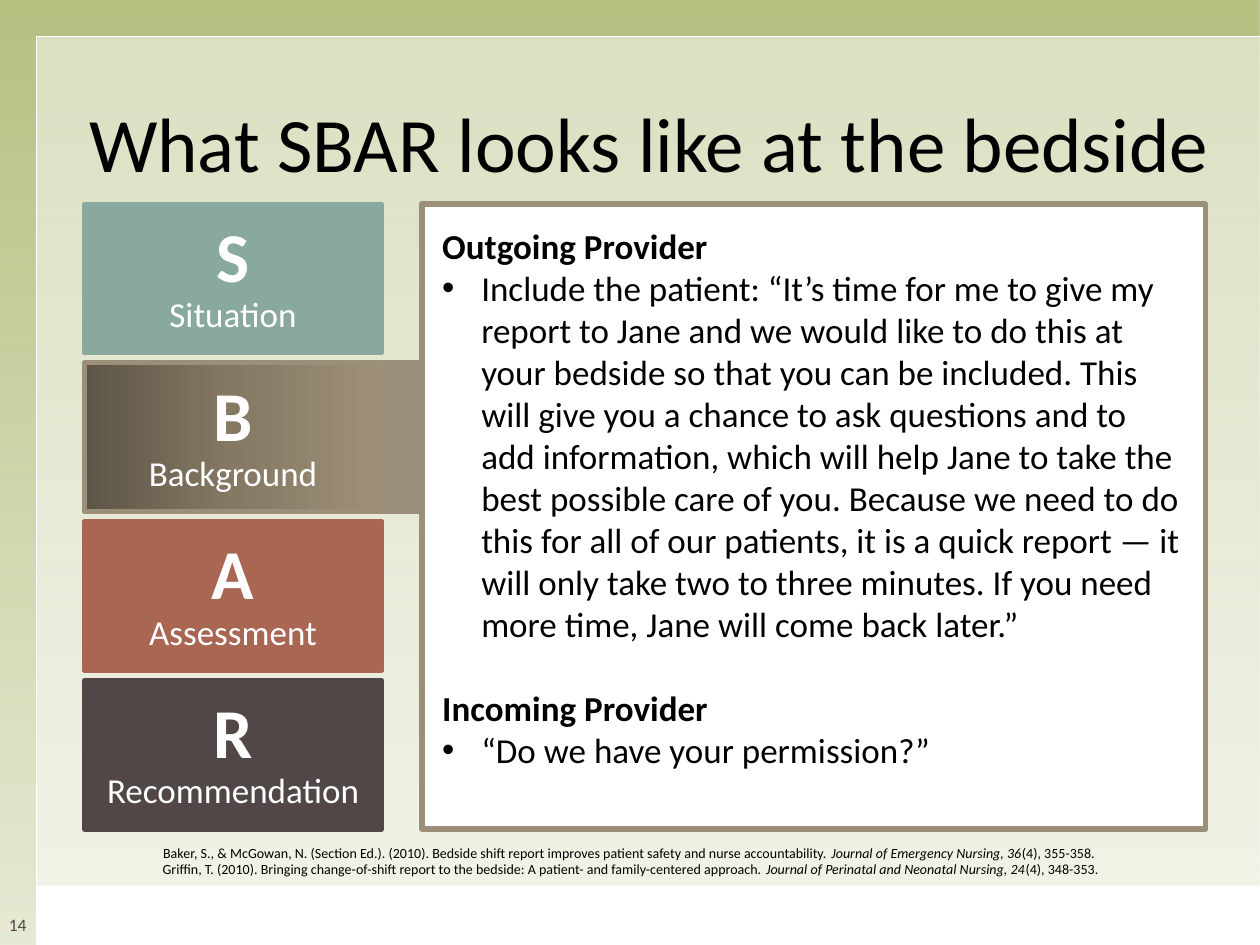
from dataclasses import dataclass

from lxml.etree import SubElement
from pptx import Presentation
from pptx.dml.color import RGBColor
from pptx.enum.shapes import MSO_SHAPE
from pptx.enum.text import MSO_ANCHOR, PP_ALIGN
from pptx.oxml.ns import qn
from pptx.util import Inches, Pt

FONT = "Calibri"
BLACK, WHITE = "000000", "FFFFFF"
OLIVE, TAUPE, SLATE = "9EAC58", "9B8F79", "514746"


@dataclass
class Box:
    x: float
    y: float
    w: float
    h: float

    def spot(self) -> tuple:
        return tuple(Inches(v) for v in (self.x, self.y, self.w, self.h))


@dataclass
class Stop:
    pos: int
    color: str
    alpha: int = 100


@dataclass
class Step:
    letter: str
    word: str
    color: str


@dataclass
class Run:
    text: str
    bold: bool = False
    italic: bool = False


def rgb(color: str) -> RGBColor:
    return RGBColor.from_string(color)


def add_alpha(clr, alpha: int) -> None:
    if alpha < 100:
        SubElement(clr, qn("a:alpha")).set("val", str(alpha * 1000))


def add_rect(slide, box: Box, color: str, line: str = "", width: float = 3, alpha: int = 100):
    shape = slide.shapes.add_shape(MSO_SHAPE.RECTANGLE, *box.spot())
    shape.shadow.inherit = False
    shape.fill.solid()
    shape.fill.fore_color.rgb = rgb(color)
    add_alpha(shape._element.spPr.find(qn("a:solidFill"))[0], alpha)
    if line:
        shape.line.color.rgb = rgb(line)
        shape.line.width = Pt(width)
    else:
        shape.line.fill.background()
    return shape


def blend(shape, stops: list[Stop], angle: int) -> None:
    """Fill the shape with a linear gradient, its angle clockwise."""
    shape.fill.gradient()
    grad = shape._element.spPr.find(qn("a:gradFill"))
    for part in list(grad):
        grad.remove(part)
    group = SubElement(grad, qn("a:gsLst"))
    for stop in stops:
        mark = SubElement(group, qn("a:gs"), pos=str(stop.pos * 1000))
        clr = SubElement(mark, qn("a:srgbClr"), val=stop.color)
        add_alpha(clr, stop.alpha)
    SubElement(grad, qn("a:lin"), ang=str(angle * 60000), scaled="0")


def add_label(slide, box: Box, anchor=MSO_ANCHOR.TOP, wrap: bool = True):
    frame = slide.shapes.add_textbox(*box.spot()).text_frame
    frame.word_wrap = wrap
    frame.vertical_anchor = anchor
    return frame


def set_pads(frame, left: float, top: float, right: float, bottom: float) -> None:
    frame.margin_left, frame.margin_top = Inches(left), Inches(top)
    frame.margin_right, frame.margin_bottom = Inches(right), Inches(bottom)


def add_para(frame, runs: list[Run], size: int, color: str = BLACK, align=PP_ALIGN.CENTER):
    first = not frame.paragraphs[0].runs
    para = frame.paragraphs[0] if first else frame.add_paragraph()
    para.alignment = align
    for item in runs:
        run = para.add_run()
        run.text = item.text
        font = run.font
        font.name, font.size = FONT, Pt(size)
        font.bold, font.italic = item.bold, item.italic
        font.color.rgb = rgb(color)
    return para


def add_bullet(para) -> None:
    props = para._p.get_or_add_pPr()
    indent = Inches(0.31)
    props.set("marL", str(indent))
    props.set("indent", str(-indent))
    SubElement(props, qn("a:buFont"), typeface="Arial")
    SubElement(props, qn("a:buChar"), char="•")


def add_step(slide, step: Step, box: Box):
    shape = add_rect(slide, box, step.color, step.color)
    frame = shape.text_frame
    frame.word_wrap = True
    frame.vertical_anchor = MSO_ANCHOR.MIDDLE
    for run, size in ((Run(step.letter, bold=True), 40), (Run(step.word), 20)):
        add_para(frame, [run], size, WHITE).line_spacing = 0.9
    return shape


def add_frame(slide) -> None:
    back = add_rect(slide, Box(-0.01, 0, 10.01, 7.5), OLIVE)
    blend(back, [Stop(0, OLIVE, 75), Stop(50, OLIVE, 50), Stop(100, OLIVE, 25)], 90)
    add_rect(slide, Box(0.29, 0.29, 9.72, 7.2), WHITE, WHITE, 1, 50)
    add_rect(slide, Box(0.29, 7.03, 9.72, 0.47), WHITE)
    number = add_label(slide, Box(0, 7.03, 0.28, 0.47), MSO_ANCHOR.BOTTOM)
    set_pads(number, 0, 0.04, 0, 0.08)
    add_para(number, [Run("14")], 10, SLATE)


def add_steps(slide) -> None:
    left, top, wide, high, pitch = 0.67, 1.62, 2.36, 1.18, 1.26
    steps = [
        Step("S", "Situation", "89A99E"),
        Step("B", "Background", TAUPE),
        Step("A", "Assessment", "A96652"),
        Step("R", "Recommendation", SLATE),
    ]
    active = 1
    add_rect(slide, Box(left + wide, top + active * pitch, 0.39, high), TAUPE, TAUPE)
    for i, step in enumerate(steps):
        shape = add_step(slide, step, Box(left, top + i * pitch, wide, high))
        if i == active:
            blend(shape, [Stop(0, "5D5546"), Stop(50, "857964"), Stop(100, "9E9076")], 0)


def add_script(slide) -> None:
    panel = add_rect(slide, Box(3.35, 1.62, 6.22, 4.96), WHITE, TAUPE).text_frame
    panel.word_wrap = True
    panel.vertical_anchor = MSO_ANCHOR.TOP
    set_pads(panel, 0.16, 0.16, 0.16, 0.16)
    parts = [
        ("Outgoing Provider",
         "Include the patient: “It’s time for me to give my report to Jane and we would "
         "like to do this at your bedside so that you can be included. This will give you "
         "a chance to ask questions and to add information, which will help Jane to take "
         "the best possible care of you. Because we need to do this for all of our "
         "patients, it is a quick report — it will only take two to three minutes. If you "
         "need more time, Jane will come back later.”"),
        ("Incoming Provider", "“Do we have your permission?”"),
    ]
    for i, (role, words) in enumerate(parts):
        head = add_para(panel, [Run(role, bold=True)], 20, align=PP_ALIGN.LEFT)
        if i:
            head.space_before = Pt(24)
        add_bullet(add_para(panel, [Run(words)], 20, align=PP_ALIGN.LEFT))


def add_sources(slide) -> None:
    frame = add_label(slide, Box(1.15, 6.65, 7.71, 0.37), wrap=False)
    sources = [
        ("Baker, S., & McGowan, N. (Section Ed.). (2010). Bedside shift report improves "
         "patient safety and nurse accountability. ",
         "Journal of Emergency Nursing, 36", "(4), 355-358. "),
        ("Griffin, T. (2010). Bringing change-of-shift report to the bedside: A patient- "
         "and family-centered approach. ",
         "Journal of Perinatal and Neonatal Nursing, 24", "(4), 348-353."),
    ]
    for title, journal, pages in sources:
        add_para(frame, [Run(title), Run(journal, italic=True), Run(pages)], 8)


def main() -> None:
    deck = Presentation()
    deck.slide_width, deck.slide_height = Inches(10), Inches(7.5)
    slide = deck.slides.add_slide(deck.slide_layouts[6])
    add_frame(slide)
    title = add_label(slide, Box(0.58, 0.5, 9.15, 1.25), MSO_ANCHOR.MIDDLE)
    add_para(title, [Run("What SBAR looks like at the bedside")], 44)
    add_steps(slide)
    add_script(slide)
    add_sources(slide)
    deck.save("out.pptx")


if __name__ == "__main__":
    main()
